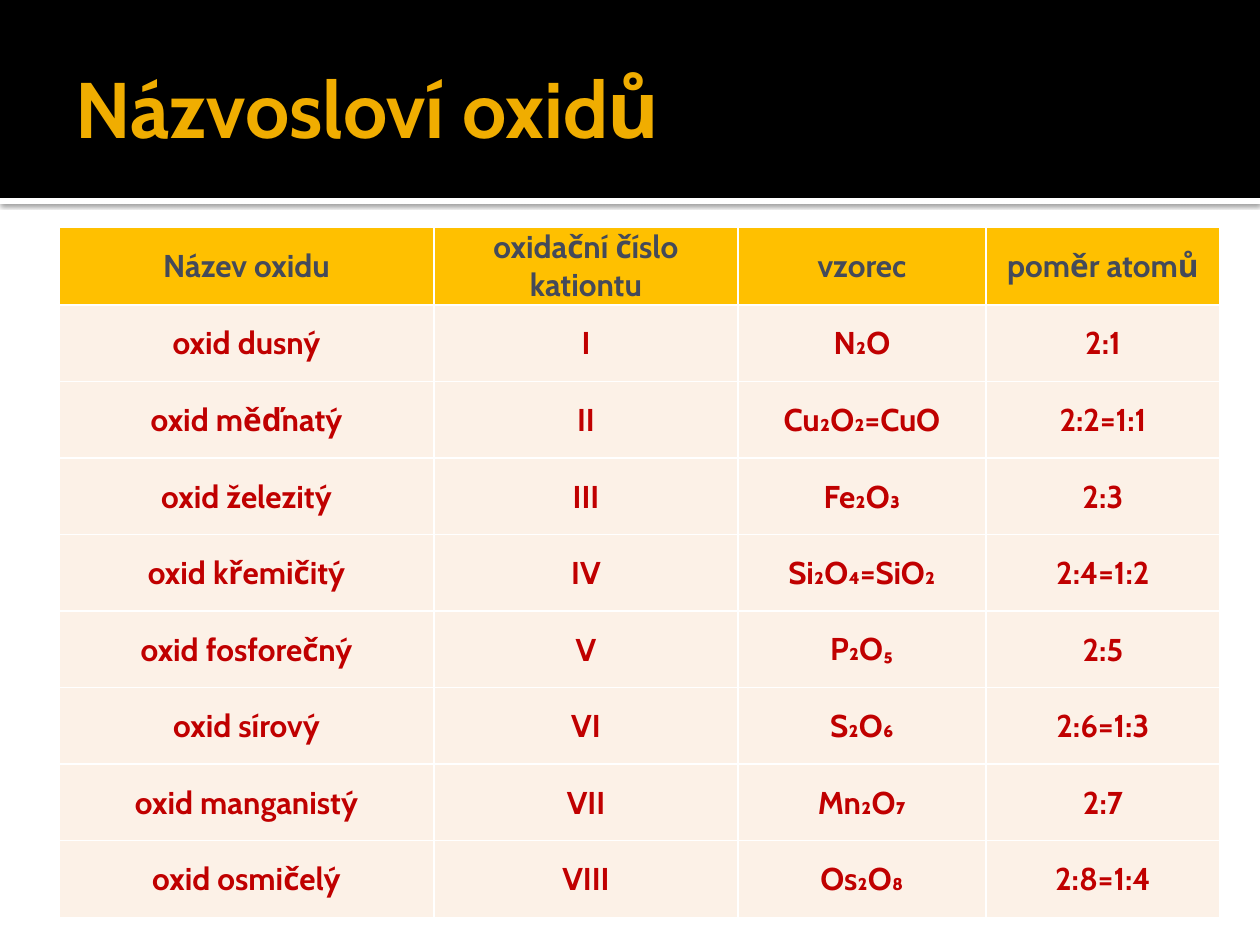
import lxml.etree
import pptx
import pptx.dml.color
import pptx.enum.shapes
import pptx.enum.text
import pptx.oxml
import pptx.oxml.ns
import pptx.util

RGB = pptx.dml.color.RGBColor
BLACK = RGB(0x00, 0x00, 0x00)
WHITE = RGB(0xFF, 0xFF, 0xFF)
GOLD = RGB(0xF0, 0xAD, 0x00)
AMBER = RGB(0xFF, 0xC0, 0x00)
SLATE = RGB(0x44, 0x4A, 0x5A)
RED = RGB(0xC0, 0x00, 0x00)
CREAM = RGB(0xFC, 0xF1, 0xE7)

TITLE = "Názvosloví oxidů"
HEADER = ("Název oxidu", "oxidační číslo kationtu", "vzorec", "poměr atomů")
OXIDES = [
    ("oxid dusný", "I", "N₂O", "2:1"),
    ("oxid měďnatý", "II", "Cu₂O₂=CuO", "2:2=1:1"),
    ("oxid železitý", "III", "Fe₂O₃", "2:3"),
    ("oxid křemičitý", "IV", "Si₂O₄=SiO₂", "2:4=1:2"),
    ("oxid fosforečný", "V", ("P₂O", "₅"), "2:5"),
    ("oxid sírový", "VI", "S₂O₆", "2:6=1:3"),
    ("oxid manganistý", "VII", "Mn₂O₇", "2:7"),
    ("oxid osmičelý", "VIII", "Os₂O₈", "2:8=1:4"),
]
FONTS = ("Cabin", "Calibri")

SLIDE_SIZE = (1260, 945)
BANDS = [((0, 198, 1260, 6), WHITE, True), ((0, 0, 1260, 198), BLACK, False)]
TITLE_BOX = (63, 21, 1134, 173)
TABLE_LEFT, TABLE_TOP, TABLE_HEIGHT = 59, 227, 689
COLUMN_WIDTHS = (375, 304, 248, 234)

MIDDLE = pptx.enum.text.MSO_ANCHOR.MIDDLE
LEFT = pptx.enum.text.PP_ALIGN.LEFT
CENTER = pptx.enum.text.PP_ALIGN.CENTER
NAMESPACE = pptx.oxml.ns.nsdecls("a")
SHADOW = (
    f'<a:effectLst {NAMESPACE}><a:outerShdw blurRad="31750" dist="10160" '
    'dir="5400000" algn="tl" rotWithShape="0"><a:srgbClr val="000000">'
    '<a:alpha val="60000"/></a:srgbClr></a:outerShdw></a:effectLst>'
)


def px(length):
    return pptx.util.Emu(round(length * 914400 / 126))


def set_attributes(target, values):
    for name, value in values.items():
        setattr(target, name, value)


def write(para, texts, size, color, align):
    para.alignment = align
    for text, font in zip(texts, FONTS):
        span = para.add_run()
        span.text = text
        set_attributes(span.font, {"name": font, "size": pptx.util.Pt(size), "bold": True})
        span.font.color.rgb = color


def add_band(page, place, color, shaded):
    band = page.shapes.add_shape(pptx.enum.shapes.MSO_SHAPE.RECTANGLE, *map(px, place))
    band.fill.solid()
    band.fill.fore_color.rgb = color
    band.line.fill.background()
    band.shadow.inherit = False
    if shaded:
        properties = band.element.spPr
        plain = properties.find(pptx.oxml.ns.qn("a:effectLst"))
        properties.replace(plain, pptx.oxml.parse_xml(SHADOW))


def add_title(page):
    title = page.shapes.title
    set_attributes(title, dict(zip(("left", "top", "width", "height"), map(px, TITLE_BOX))))
    frame = title.text_frame
    set_attributes(frame, {
        "word_wrap": True, "vertical_anchor": MIDDLE,
        "auto_size": pptx.enum.text.MSO_AUTO_SIZE.NONE,
        "margin_left": pptx.util.Inches(0.1), "margin_right": pptx.util.Inches(0.05),
        "margin_top": pptx.util.Inches(0.05), "margin_bottom": pptx.util.Inches(0.05),
    })
    write(frame.paragraphs[0], (TITLE,), 45, GOLD, LEFT)
    page.shapes.element.append(title.element)


def add_borders(cell):
    properties = cell._tc.get_or_add_tcPr()
    for side in ("lnL", "lnR", "lnT", "lnB"):
        properties.append(pptx.oxml.parse_xml(
            f'<a:{side} {NAMESPACE} w="12700"><a:solidFill>'
            f'<a:srgbClr val="{WHITE}"/></a:solidFill></a:{side}>'
        ))


def add_oxide_table(page):
    rows = [HEADER] + OXIDES
    table = page.shapes.add_table(
        len(rows), len(HEADER), px(TABLE_LEFT), px(TABLE_TOP),
        px(sum(COLUMN_WIDTHS)), px(TABLE_HEIGHT),
    ).table
    for column, width in zip(table.columns, COLUMN_WIDTHS):
        column.width = px(width)
    for index, values in enumerate(rows):
        table.rows[index].height = px(TABLE_HEIGHT / len(rows))
        fill, color = (CREAM, RED) if index else (AMBER, SLATE)
        for position, value in enumerate(values):
            cell = table.cell(index, position)
            set_attributes(cell, {
                "vertical_anchor": MIDDLE, "margin_left": px(1), "margin_right": px(1),
                "margin_top": px(1), "margin_bottom": px(0),
            })
            add_borders(cell)
            cell.fill.solid()
            cell.fill.fore_color.rgb = fill
            texts = (value,) if isinstance(value, str) else value
            write(cell.text_frame.paragraphs[0], texts, 18, color, CENTER)


def main():
    deck = pptx.Presentation()
    deck.slide_width, deck.slide_height = map(px, SLIDE_SIZE)
    page = deck.slides.add_slide(deck.slide_layouts[5])
    for band in BANDS:
        add_band(page, *band)
    add_title(page)
    add_oxide_table(page)
    deck.save("out.pptx")


if __name__ == "__main__":
    main()
